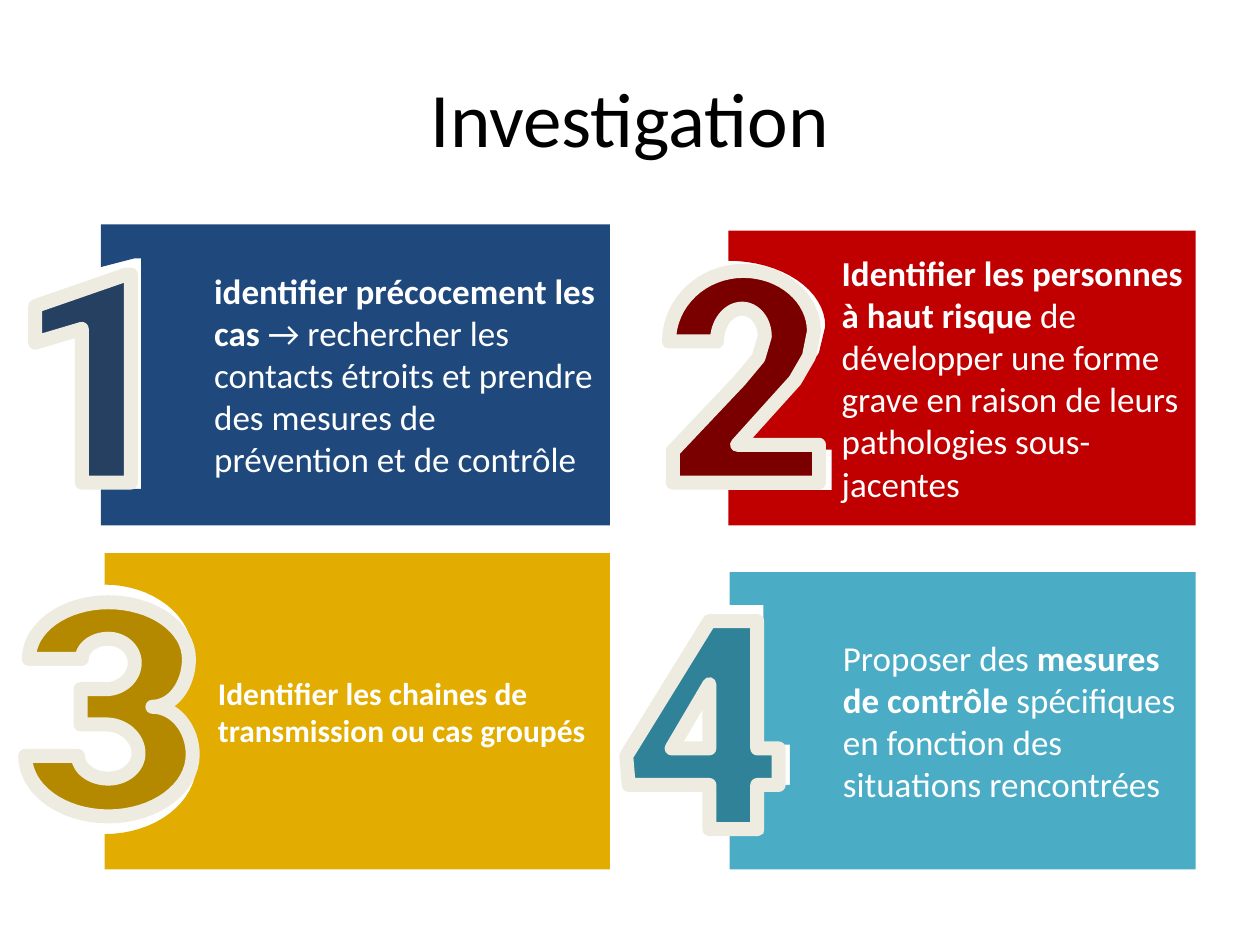
import math

from pptx import Presentation
from pptx import util as u
from pptx.dml.color import RGBColor
from pptx.enum import text
from pptx.oxml import parse_xml
from pptx.oxml.ns import nsdecls

COLORS = {
    "title": "000000", "body": "FFFFFF", "rim": "EEECE1",
    "blue": "1F497D", "red": "C00000", "gold": "E2AC00", "teal": "4BACC6",
    "dark blue": "254061", "dark red": "7A0000",
    "dark gold": "B48900", "dark teal": "308298",
}
GRID = 0.72  # outline coordinates count steps of this many points
ARC_STEPS = 16
RIGHTS = (484, 949)    # right edges of the two columns
BOTTOMS = (417, 690)   # bottom edges of the two rows

# Outline steps: (x, y) is straight; "h" or "v" marks a quarter ellipse
# that sets off horizontally or vertically.
# Panel: left, top, fill, text size, notch around the digit, runs (text, bold)
PANELS = [
    (80, 178, "blue", 20,
     [(80, 388), (112, 388), (112, 205), (107, 205), (80, 212)],
     [("identifier précocement les cas ", True),
      ("→ rechercher les contacts étroits et prendre des mesures de "
       "prévention et de contrôle", False)]),
    (578, 183, "red", 20,
     [(578, 389), (660, 389), (660, 357), (578, 357), (636, 301), (650, 280),
      (655, 259), (578, 207, "v")],
     [("Identifier les personnes à haut risque ", True),
      ("de développer une forme grave en raison de leurs pathologies "
       "sous-jacentes", False)]),
    (83, 439, "gold", 18,
     [(83, 662), (156, 606, "h"), (118, 561, "v"), (153, 519, "h"), (83, 464, "v")],
     [("Identifier les chaines de transmission ou cas groupés", True)]),
    (579, 454, "teal", 20,
     [(579, 662), (606, 662), (606, 623), (627, 623), (627, 591), (606, 591),
      (606, 480), (579, 480)],
     [("Proposer des ", False), ("mesures de contrôle ", True),
      ("spécifiques en fonction des situations rencontrées", False)]),
]

# Digit: fill and its contours
DIGITS = [
    ("dark blue", [[(100, 218), (104, 218), (104, 383), (65, 383), (65, 261),
                    (28, 272), (28, 243)]]),
    ("dark teal", [
        [(563, 493), (601, 493), (601, 594), (618, 594), (618, 623), (601, 623),
         (601, 658), (563, 658), (563, 623), (499, 623), (497, 600)],
        [(563, 543), (533, 594), (563, 594)]]),
    ("dark gold", [[
        (23, 523), (86, 478, "v"), (150, 523, "h"), (121, 561, "v"),
        (153, 599, "h"), (86, 648, "v"), (20, 600, "h"), (62, 600),
        (86, 618, "v"), (110, 598, "h"), (84, 575, "v"), (64, 575), (64, 547),
        (84, 547), (107, 526, "h"), (86, 507, "v"), (65, 523, "h")]]),
    ("dark red", [[
        (531, 271), (590, 215, "v"), (646, 263, "h"), (642, 283), (631, 302),
        (585, 353), (650, 353), (650, 383), (534, 383), (534, 358), (587, 302),
        (602, 284), (607, 267), (589, 245, "v"), (569, 271, "h")]]),
]


def flatten(contour):
    """Turn a contour into points, sampling its quarter ellipses."""
    points = []
    for x, y, *heading in contour:
        if heading:
            start_x, start_y = points[-1]
            for i in range(1, ARC_STEPS):
                angle = math.pi / 2 * i / ARC_STEPS
                across, down = math.sin(angle), 1 - math.cos(angle)
                if heading == ["v"]:
                    across, down = down, across
                points.append((start_x + (x - start_x) * across,
                               start_y + (y - start_y) * down))
        points.append((x, y))
    return [(u.Pt(x * GRID), u.Pt(y * GRID)) for x, y in points]


class Deck:
    font = "Calibri"

    def __init__(self):
        self.prs = Presentation()
        self.prs.slide_width, self.prs.slide_height = u.Pt(720), u.Pt(540)
        self.slide = self.prs.slides.add_slide(self.prs.slide_layouts[5])

    def style(self, run, size, color, bold=False):
        run.font.name, run.font.size, run.font.bold = self.font, u.Pt(size), bold
        run.font.color.rgb = RGBColor.from_string(COLORS[color])

    def title(self, wording):
        heading = self.slide.shapes.title
        heading.left, heading.top = u.Pt(36), u.Pt(21.6)
        heading.width, heading.height = u.Pt(648), u.Pt(90)
        frame = heading.text_frame
        frame.text = wording
        frame.vertical_anchor = text.MSO_ANCHOR.MIDDLE
        frame.paragraphs[0].alignment = text.PP_ALIGN.CENTER
        self.style(frame.paragraphs[0].runs[0], 44, "title")

    def outline(self, contours, color):
        first, *holes = [flatten(contour) for contour in contours]
        builder = self.slide.shapes.build_freeform(*first[0])
        builder.add_line_segments(first[1:], close=True)
        for hole in holes:
            builder.move_to(*hole[0])
            builder.add_line_segments(hole[1:], close=True)
        shape = builder.convert_to_shape()
        shape.shadow.inherit = False
        shape.fill.solid()
        shape.fill.fore_color.rgb = RGBColor.from_string(COLORS[color])
        shape.line.fill.background()
        return shape

    def panel(self, right, bottom, left, top, color, size, notch, runs):
        corners = [(left, top), (right, top), (right, bottom), (left, bottom)]
        frame = self.outline([corners + notch], color).text_frame
        frame.word_wrap = True
        frame.vertical_anchor = text.MSO_ANCHOR.MIDDLE
        frame.margin_left, frame.margin_right = u.Pt(64.8), u.Pt(7.2)
        frame.margin_top = frame.margin_bottom = u.Pt(3.6)
        paragraph = frame.paragraphs[0]
        paragraph.alignment = text.PP_ALIGN.LEFT
        paragraph.space_after = u.Pt(12)
        for wording, bold in runs:
            run = paragraph.add_run()
            run.text = wording
            self.style(run, size, "body", bold)

    def digit(self, color, contours):
        shape = self.outline(contours, color)
        shape.line.color.rgb = RGBColor.from_string(COLORS["rim"])
        shape.line.width = u.Pt(8)
        # Rounded corners on the rim
        shape.line._get_or_add_ln().append(parse_xml(f"<a:round {nsdecls('a')}/>"))


def main():
    deck = Deck()
    deck.title("Investigation")
    # Four text panels, row by row, then the digits over their left edges
    for i, panel in enumerate(PANELS):
        deck.panel(RIGHTS[i % 2], BOTTOMS[i // 2], *panel)
    for digit in DIGITS:
        deck.digit(*digit)
    deck.prs.save("out.pptx")


if __name__ == "__main__":
    main()
